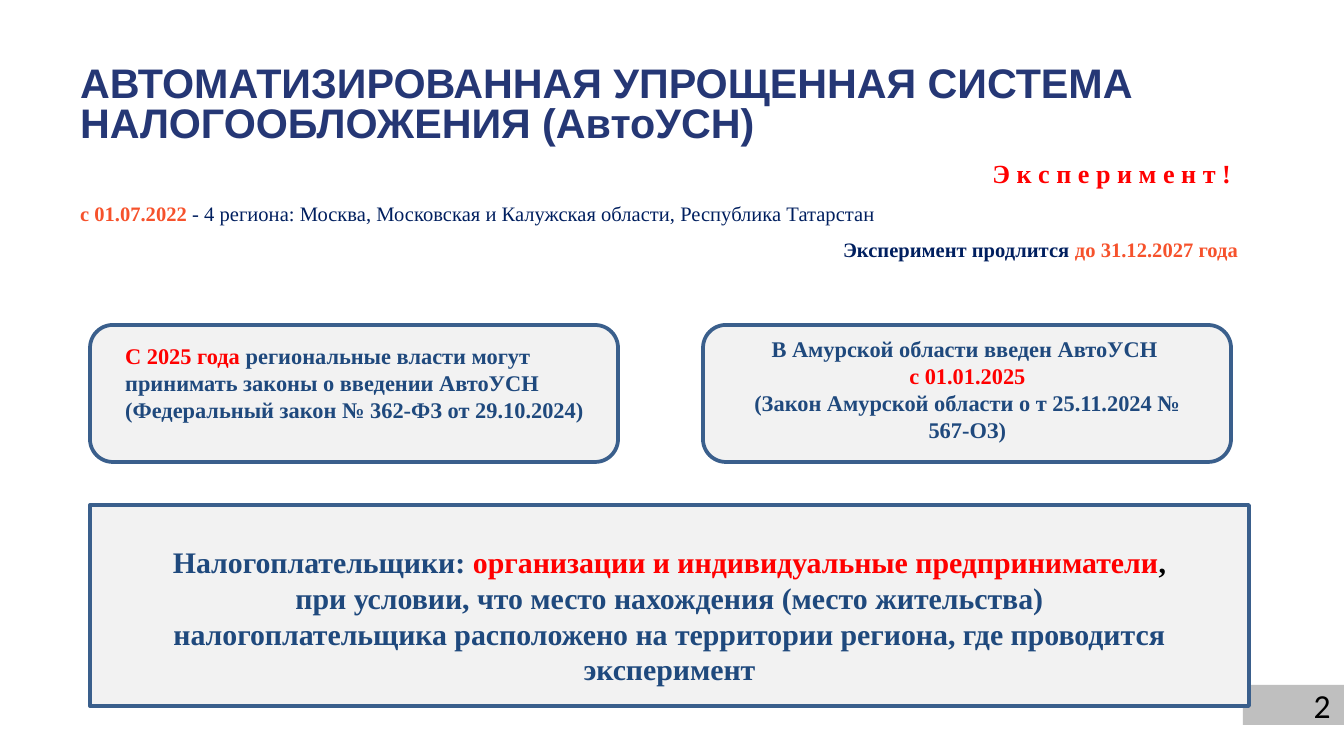
from pptx import Presentation
from pptx.dml.color import RGBColor
from pptx.enum.shapes import MSO_SHAPE
from pptx.enum.text import MSO_ANCHOR, MSO_AUTO_SIZE, PP_ALIGN
from pptx.oxml.ns import qn
from pptx.util import Emu, Pt

SCALE = 914400 / 134.4
COLORS = {
    "title": "253775", "navy": "001F5F", "blue": "1F497D", "red": "FF0000",
    "orange": "F6522C", "black": "000000", "border": "3A5F8C",
    "panel": "F2F2F2", "gray": "BFBFBF",
}
SERIF = "Times New Roman"
LEFT, CENTER, RIGHT = PP_ALIGN.LEFT, PP_ALIGN.CENTER, PP_ALIGN.RIGHT


def px(length):
    return Emu(round(length * SCALE))


def rgb(name):
    return RGBColor.from_string(COLORS[name])


class TaxSlide:
    """Holds the slide and the style of its titles, panels and texts."""

    def __init__(self, deck):
        self.slide = deck.slides.add_slide(deck.slide_layouts[1])

    def place(self, holder, box):
        holder.left, holder.top, holder.width, holder.height = map(px, box)
        frame = holder.text_frame
        frame.word_wrap = True
        frame.auto_size = MSO_AUTO_SIZE.NONE
        frame.vertical_anchor = MSO_ANCHOR.TOP
        frame.margin_left = frame.margin_right = px(10)
        frame.margin_top = frame.margin_bottom = px(5)
        return frame

    def fill_lines(self, frame, lines, size, font=SERIF, spacing=1.0, before=0):
        for index, (align, *pieces) in enumerate(lines):
            paragraph = frame.paragraphs[0] if index == 0 else frame.add_paragraph()
            paragraph.alignment = align
            paragraph.line_spacing = spacing
            paragraph.space_before = Pt(before if index else 0)
            for words, color, *options in pieces:
                run = paragraph.add_run()
                run.text = words
                run.font.name = font
                run.font.size = Pt(options[1] if len(options) > 1 else size)
                run.font.bold = options[0] if options else True
                run.font.color.rgb = rgb(color)

    def title(self, box, lines):
        frame = self.place(self.slide.shapes.title, box)
        self.fill_lines(frame, lines, 22.1, "Arial", 0.8)

    def body(self, box, lines):
        frame = self.place(self.slide.placeholders[1], box)
        self.fill_lines(frame, lines, 11, spacing=0.9, before=7.5)
        for paragraph in frame.paragraphs:
            properties = paragraph._p.get_or_add_pPr()
            properties.set("marL", "0")
            properties.set("indent", "0")
            properties.append(properties.makeelement(qn("a:buNone"), {}))

    def panel(self, kind, box, fill="panel", border="border"):
        panel = self.slide.shapes.add_shape(kind, *map(px, box))
        panel.shadow.inherit = False
        panel.fill.solid()
        panel.fill.fore_color.rgb = rgb(fill)
        if border:
            panel.line.color.rgb = rgb(border)
            panel.line.width = Pt(2)
        else:
            panel.line.fill.background()
        return panel

    def text(self, box, lines, size):
        frame = self.slide.shapes.add_textbox(*map(px, box)).text_frame
        frame.word_wrap = True
        self.fill_lines(frame, lines, size)

    def page_number(self, box, number):
        badge = self.panel(MSO_SHAPE.RECTANGLE, box, "gray", None)
        badge.text_frame.vertical_anchor = MSO_ANCHOR.MIDDLE
        self.fill_lines(badge.text_frame, [(RIGHT, (number, "black", False))], 18, "Calibri")


def main():
    deck = Presentation()
    deck.slide_width, deck.slide_height = px(1344), px(756)
    page = TaxSlide(deck)

    page.title((70, 62, 1097, 117), [
        (LEFT, ("АВТОМАТИЗИРОВАННАЯ УПРОЩЕННАЯ СИСТЕМА", "title")),
        (LEFT, ("НАЛОГООБЛОЖЕНИЯ (АвтоУСН)", "title")),
    ])
    page.body((70, 156, 1178, 528), [
        (RIGHT, ("Э к с п е р и м е н т ! ", "red", True, 14)),
        (LEFT, ("с 01.07.2022 ", "orange"),
         ("- 4 региона: Москва, Московская и Калужская области, Республика Татарстан",
          "navy", False)),
        (RIGHT, ("Эксперимент продлится ", "navy"), ("до 31.12.2027 года", "orange")),
    ])
    page.page_number((1243, 685, 101, 40), "2")

    for left in (90, 703):
        page.panel(MSO_SHAPE.ROUNDED_RECTANGLE, (left, 325, 528, 137))
    page.text((112, 336, 487, 118), [
        (LEFT, ("С 2025 года ", "red"),
         ("региональные власти могут принимать законы о введении АвтоУСН "
          "(Федеральный закон № 362-ФЗ от 29.10.2024)", "blue")),
    ], 12)
    page.text((724, 329, 487, 122), [
        (CENTER, ("В Амурской области введен АвтоУСН ", "blue")),
        (CENTER, ("с 01.01.2025", "red")),
        (CENTER, ("(Закон Амурской области о т 25.11.2024 № 567-ОЗ)", "blue")),
    ], 12)

    page.panel(MSO_SHAPE.RECTANGLE, (90, 505, 1159, 201))
    page.text((125, 537, 1089, 159), [
        (CENTER, ("Налогоплательщики: ", "blue"),
         ("организации и индивидуальные предприниматели", "red"), (",", "black")),
        (CENTER, ("при условии, что место нахождения (место жительства)", "blue")),
        (CENTER, ("налогоплательщика расположено на территории региона, где проводится",
                  "blue")),
        (CENTER, ("эксперимент", "blue")),
    ], 16)

    deck.save("out.pptx")


if __name__ == "__main__":
    main()
